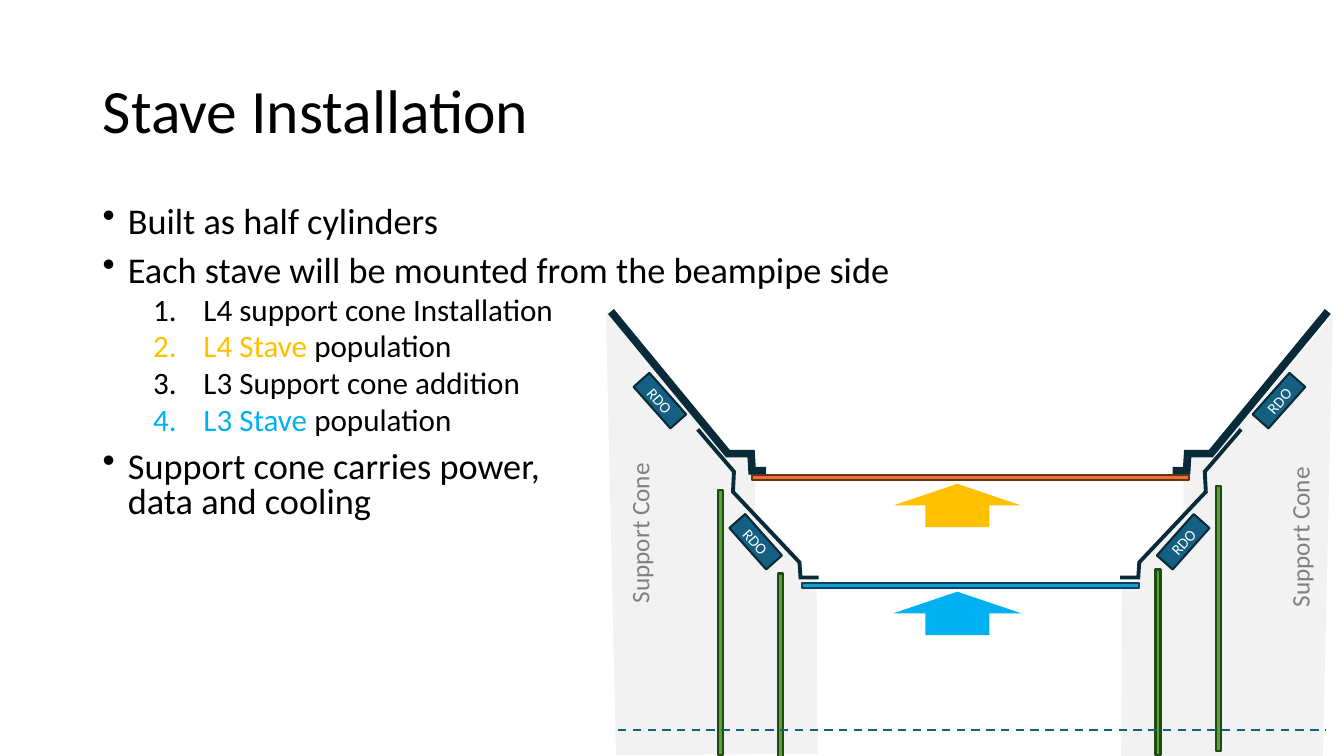
import dataclasses

import lxml.etree
import pptx
import pptx.dml.color
import pptx.enum.dml
import pptx.enum.shapes
import pptx.enum.text
import pptx.oxml.ns
import pptx.util

PX = 9144
SHAPES = pptx.enum.shapes.MSO_SHAPE
ALIGN = pptx.enum.text.PP_ALIGN
ANCHOR = pptx.enum.text.MSO_ANCHOR


@dataclasses.dataclass(frozen=True)
class Theme:
    font: str = "Calibri"
    ink: str = "000000"
    white: str = "FFFFFF"
    label: str = "808080"
    cone: str = "F2F2F2"
    frame: str = "092A39"
    board: str = "156082"
    rod: str = "4EA72E"
    rod_edge: str = "224914"
    outer: str = "E97132"
    outer_edge: str = "663216"
    inner: str = "0F9ED5"
    inner_edge: str = "07455D"
    gold: str = "FFC000"
    sky: str = "00B0F0"
    title_size: float = 44
    bullet_size: float = 25.9
    step_size: float = 22.2
    label_size: float = 18
    board_size: float = 11


THEME = Theme()

POINTS = [
    ("bullet", [("Built as half cylinders", THEME.ink)]),
    ("bullet", [("Each stave will be mounted from the beampipe side", THEME.ink)]),
    ("step", [("L4 support cone Installation", THEME.ink)]),
    ("step", [("L4 Stave ", THEME.gold), ("population", THEME.ink)]),
    ("step", [("L3 Support cone addition", THEME.ink)]),
    ("step", [("L3 Stave ", THEME.sky), ("population", THEME.ink)]),
    ("bullet", [("Support cone carries power,\vdata and cooling", THEME.ink)]),
]
POINT_FORMATS = {
    "bullet": dict(size=THEME.bullet_size, margin=25, hang=25, before=10,
                   mark=("a:buChar", {"char": "•"})),
    "step": dict(size=THEME.step_size, margin=100, hang=50, before=5,
                 mark=("a:buAutoNum", {"type": "arabicPeriod"})),
}

CONE = [(0, 0), (121, 142), (145, 141), (148, 159), (148, 200),
        (192, 244), (193, 264), (209, 264), (210, 439), (10, 440)]
OUTER_SUPPORT = [(5, 0), (121, 141), (144, 141), (145, 158), (159, 158)]
INNER_SUPPORT = [(91, 117), (127, 159), (126, 179), (192, 249), (193, 264), (211, 264)]
RODS = [(111, 177, 5, 263), (171, 260, 5, 184)]
BOARDS = [(121, 218, 55, 21), (26, 78, 55, 21)]
STAVES = [
    (162, 433, THEME.outer, THEME.outer_edge, THEME.gold),
    (269, 335, THEME.inner, THEME.inner_edge, THEME.sky),
]


def apply(target, values):
    for name, value in values.items():
        setattr(target, name, value)


def scaled(*lengths):
    return [length * PX for length in lengths]


def rgb(colour):
    return pptx.dml.color.RGBColor.from_string(colour)


def paint(shape, fill=None, edge=None, weight=1.5):
    shape.shadow.inherit = False
    if fill:
        shape.fill.solid()
        shape.fill.fore_color.rgb = rgb(fill)
    else:
        shape.fill.background()
    if edge:
        shape.line.color.rgb = rgb(edge)
        shape.line.width = pptx.util.Pt(weight)
    else:
        shape.line.fill.background()


def add_span(para, text, size, colour):
    span = para.add_run()
    span.text = text
    apply(span.font, dict(name=THEME.font, size=pptx.util.Pt(size)))
    span.font.color.rgb = rgb(colour)


def set_label(shape, text, size, colour):
    frame = shape.text_frame
    apply(frame, dict(margin_left=0, margin_right=0, margin_top=0, margin_bottom=0,
                      word_wrap=False, vertical_anchor=ANCHOR.MIDDLE))
    frame.paragraphs[0].alignment = ALIGN.CENTER
    add_span(frame.paragraphs[0], text, size, colour)


def add_preset(page, kind, box, **look):
    shape = page.shapes.add_shape(kind, *scaled(*box))
    paint(shape, **look)
    return shape


def add_outline(page, points, closed, **look):
    builder = page.shapes.build_freeform(*points[0], scale=PX)
    builder.add_line_segments(points[1:], close=closed)
    shape = builder.convert_to_shape()
    paint(shape, **look)
    if not closed:
        stroke = shape.line._get_or_add_ln()
        lxml.etree.SubElement(stroke, pptx.oxml.ns.qn("a:miter"), lim="800000")


def add_title(page, box):
    title = page.shapes.title
    apply(title, dict(zip(("left", "top", "width", "height"), scaled(*box))))
    apply(title.text_frame, dict(vertical_anchor=ANCHOR.MIDDLE, word_wrap=True,
                                 auto_size=pptx.enum.text.MSO_AUTO_SIZE.NONE))
    para = title.text_frame.paragraphs[0]
    apply(para, dict(alignment=ALIGN.LEFT, line_spacing=0.9))
    add_span(para, "Stave Installation", THEME.title_size, THEME.ink)


def add_points(page, box):
    frame = page.shapes.add_textbox(*scaled(*box)).text_frame
    frame.word_wrap = True
    for index, (kind, spans) in enumerate(POINTS):
        style = POINT_FORMATS[kind]
        para = frame.add_paragraph() if index else frame.paragraphs[0]
        props = para._p.get_or_add_pPr()
        props.set("marL", str(style["margin"] * PX))
        props.set("indent", str(-style["hang"] * PX))
        tag, values = style["mark"]
        lxml.etree.SubElement(props, pptx.oxml.ns.qn(tag), values)
        before = style["before"] if index else 0
        apply(para, dict(line_spacing=0.8, space_before=pptx.util.Pt(before)))
        for text, colour in spans:
            head, *tail = text.split("\v")
            add_span(para, head, style["size"], colour)
            for line in tail:
                para.add_line_break()
                add_span(para, line, style["size"], colour)


def add_side(page, box, mirrored):
    left, top, width, height = box
    cone_drop, rod_drop = (4, -4) if mirrored else (0, 0)

    def place(points, drop=0):
        return [(left + (width - x if mirrored else x), top + y + drop) for x, y in points]

    def place_box(part, drop=0):
        x, y, wide, high = part
        start = width - x - wide if mirrored else x
        return left + start, top + y + drop, wide, high

    add_outline(page, place(CONE, cone_drop), True, fill=THEME.cone)
    label = page.shapes.add_textbox(*scaled(*place_box((-42, 205, 150, 30), cone_drop)))
    label.rotation = 270
    set_label(label, "Support Cone", THEME.label_size, THEME.label)
    add_outline(page, place(OUTER_SUPPORT), False, edge=THEME.frame, weight=5.5)
    add_outline(page, place(INNER_SUPPORT), False, edge=THEME.frame, weight=2.75)
    for rod in RODS:
        add_preset(page, SHAPES.RECTANGLE, place_box(rod, rod_drop),
                   fill=THEME.rod, edge=THEME.rod_edge)
    for part in BOARDS:
        board = add_preset(page, SHAPES.RECTANGLE, place_box(part),
                           fill=THEME.board, edge=THEME.frame)
        board.rotation = 311.6 if mirrored else 48.4
        set_label(board, "RDO", THEME.board_size, THEME.white)


def add_detector(page, box):
    left, top, width, height = box
    for mirrored in (False, True):
        add_side(page, box, mirrored)
    for drop, length, fill, edge, arrow in STAVES:
        start = left + (width - length) // 2 + 1
        add_preset(page, SHAPES.RECTANGLE, (start, top + drop, length, 5), fill=fill, edge=edge)
        add_preset(page, SHAPES.UP_ARROW, (left + 285, top + drop + 9, 127, 43), fill=arrow)
    beam = page.shapes.add_connector(
        pptx.enum.shapes.MSO_CONNECTOR.STRAIGHT,
        *scaled(left + 12, top + 415, left + 714, top + 415))
    beam.line.color.rgb = rgb(THEME.board)
    apply(beam.line, dict(width=pptx.util.Pt(1.5),
                          dash_style=pptx.enum.dml.MSO_LINE_DASH_STYLE.DASH))
    lxml.etree.SubElement(beam._element.spPr, pptx.oxml.ns.qn("a:effectLst"))


def main():
    deck = pptx.Presentation()
    apply(deck, dict(slide_width=1333 * PX, slide_height=750 * PX))
    page = deck.slides.add_slide(deck.slide_layouts.get_by_name("Title Only"))
    add_title(page, (92, 40, 1150, 145))
    add_points(page, (92, 200, 1150, 327))
    add_detector(page, (601, 309, 721, 440))
    deck.save("out.pptx")


if __name__ == "__main__":
    main()
